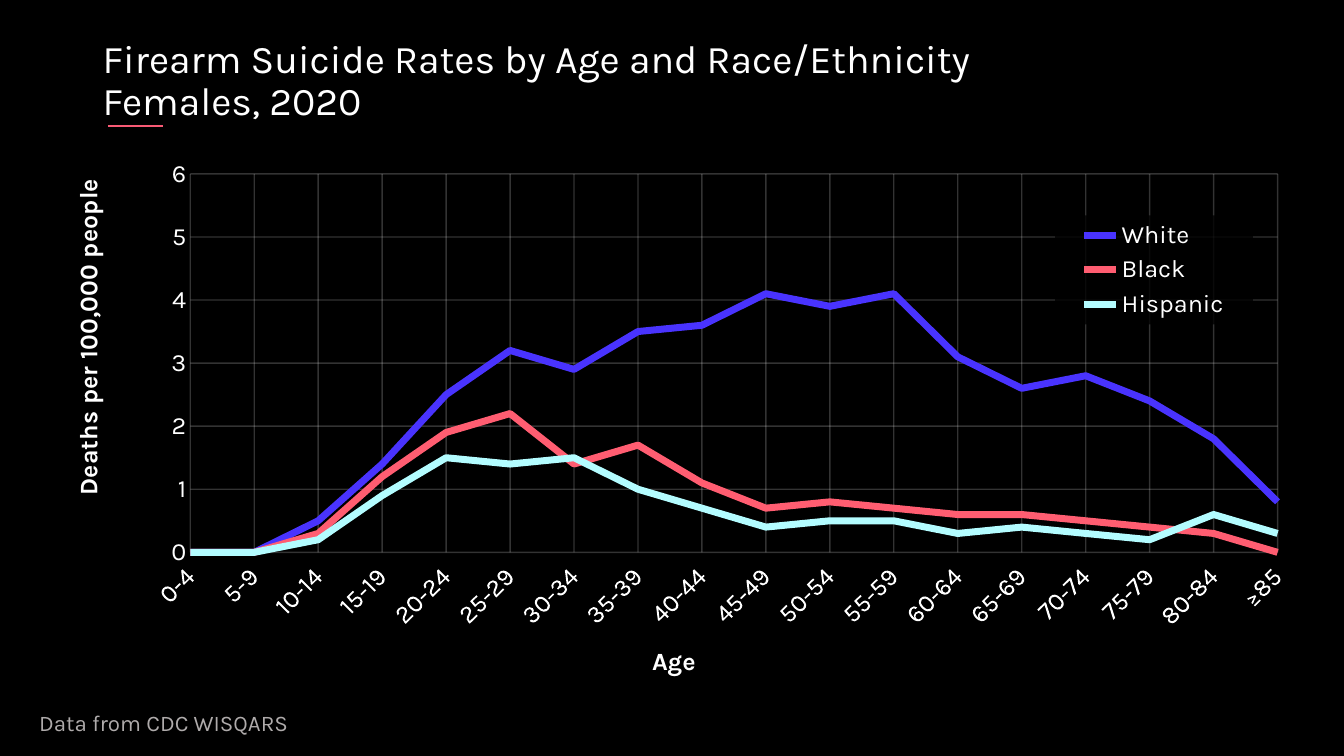
"""Build the slide on firearm suicide rates among females by age and race."""
from dataclasses import dataclass
from typing import Any

from lxml.etree import SubElement
from pptx import Presentation
from pptx.chart.data import CategoryChartData
from pptx.dml.color import RGBColor
from pptx.enum.chart import XL_CHART_TYPE as ChartType
from pptx.enum.chart import XL_LEGEND_POSITION as LegendSide
from pptx.enum.chart import XL_MARKER_STYLE as Marker
from pptx.enum.chart import XL_TICK_LABEL_POSITION as LabelSide
from pptx.enum.chart import XL_TICK_MARK as Tick
from pptx.enum.shapes import MSO_CONNECTOR as Connector
from pptx.enum.text import MSO_ANCHOR as Anchor
from pptx.oxml import parse_xml
from pptx.oxml.ns import nsdecls, qn
from pptx.util import Cm, Pt

FONT = "Karla"
WHITE = "FFFFFF"
AGES = [f"{low}-{low + 4}" for low in range(0, 85, 5)] + ["≥85"]


@dataclass
class Group:
    name: str
    color: str
    rates: list[float]


@dataclass
class Caption:
    lines: list[str]
    box: tuple[float, float, float, float]
    size: int
    color: str
    anchor: Any


GROUPS = [
    Group("White", "4933FE", [0, 0, 0.5, 1.4, 2.5, 3.2, 2.9, 3.5, 3.6,
                              4.1, 3.9, 4.1, 3.1, 2.6, 2.8, 2.4, 1.8, 0.8]),
    Group("Black", "FF5D71", [0, 0, 0.3, 1.2, 1.9, 2.2, 1.4, 1.7, 1.1,
                              0.7, 0.8, 0.7, 0.6, 0.6, 0.5, 0.4, 0.3, 0]),
    Group("Hispanic", "B3FCFF", [0, 0, 0.2, 0.9, 1.5, 1.4, 1.5, 1, 0.7,
                                 0.4, 0.5, 0.5, 0.3, 0.4, 0.3, 0.2, 0.6, 0.3]),
]
CAPTIONS = [
    Caption(["Data from CDC WISQARS"], (0.74, 17.81, 24.84, 1.07), 16, "AFABAB", Anchor.TOP),
    Caption(["Firearm Suicide Rates by Age and Race/Ethnicity", "Females, 2020"],
            (2.34, 0.94, 29.21, 2.24), 28, WHITE, Anchor.MIDDLE),
]


def rgb(code: str) -> RGBColor:
    return RGBColor.from_string(code)


def style(font: Any, size: int, color: str, bold: bool = False) -> None:
    font.name, font.size, font.bold = FONT, Pt(size), bold
    font.color.rgb = rgb(color)


def set_alpha(element: Any, percent: int) -> None:
    for color in element.iter(qn("a:srgbClr")):
        SubElement(color, qn("a:alpha")).set("val", str(percent * 1000))


def place(element: Any, after: str | None, inner: bool = False, **fractions: float) -> None:
    """Give a chart part a manual layout in fractions of the chart."""
    old = element.find(qn("c:layout"))
    if old is not None:
        element.remove(old)
    target = '<c:layoutTarget val="inner"/>' if inner else ""
    modes = "".join(f'<c:{key}Mode val="edge"/>' for key in "xy")
    values = "".join(f'<c:{key} val="{value}"/>' for key, value in fractions.items())
    layout = parse_xml(f'<c:layout {nsdecls("c")}><c:manualLayout>{target}{modes}{values}'
                       "</c:manualLayout></c:layout>")
    if after is None:
        element.insert(0, layout)
    else:
        element.find(qn(after)).addnext(layout)


def add_caption(slide: Any, caption: Caption) -> None:
    frame = slide.shapes.add_textbox(*map(Cm, caption.box)).text_frame
    frame.word_wrap = True
    frame.vertical_anchor = caption.anchor
    paragraph = frame.paragraphs[0]
    paragraph.line_spacing = 0.9
    for index, line in enumerate(caption.lines):
        if index:
            paragraph.add_line_break()
        run = paragraph.add_run()
        run.text = line
        style(run.font, caption.size, caption.color)


def add_title_rule(slide: Any) -> None:
    rule = slide.shapes.add_connector(Connector.STRAIGHT, Cm(2.72), Cm(3.17), Cm(4.11), Cm(3.17))
    rule.line.color.rgb = rgb("F85B75")
    rule.line.width = Pt(1.25)
    SubElement(rule._element.spPr, qn("a:effectLst"))


def format_axis(axis: Any, title: str, x: float, y: float) -> None:
    axis.major_tick_mark = axis.minor_tick_mark = Tick.NONE
    axis.format.line.fill.background()
    axis.has_major_gridlines = True
    grid = axis.major_gridlines.format.line
    grid.color.rgb = rgb(WHITE)
    grid.width = Pt(1)
    set_alpha(axis._element.find(qn("c:majorGridlines")), 20)
    style(axis.tick_labels.font, 18, WHITE)
    run = axis.axis_title.text_frame.paragraphs[0].add_run()
    run.text = title
    style(run.font, 18, WHITE, bold=True)
    place(axis.axis_title._element, "c:tx", x=x, y=y)


def format_legend(chart: Any) -> None:
    chart.has_legend = True
    legend = chart.legend
    legend.position = LegendSide.TOP
    legend.include_in_layout = False
    style(legend.font, 18, WHITE)
    place(legend._element, "c:legendPos", x=0.81, y=0.11, w=0.16, h=0.21)
    backing = parse_xml(f'<c:spPr {nsdecls("c", "a")}><a:solidFill><a:srgbClr val="000000"/>'
                        "</a:solidFill><a:ln><a:noFill/></a:ln></c:spPr>")
    set_alpha(backing, 80)
    legend._element.find(qn("c:overlay")).addnext(backing)


def add_rate_chart(slide: Any) -> None:
    data = CategoryChartData()
    data.categories = AGES
    for group in GROUPS:
        data.add_series(group.name, group.rates)
    box = map(Cm, (1.37, 3.99, 31.14, 13.26))
    chart = slide.shapes.add_chart(ChartType.LINE, *box, data).chart
    chart.has_title = False
    style(chart.font, 18, WHITE)
    for series, group in zip(chart.plots[0].series, GROUPS):
        series.smooth = False
        series.marker.style = Marker.NONE
        series.format.line.color.rgb = rgb(group.color)
        series.format.line.width = Pt(5)
    chart.plots[0].vary_by_categories = False

    ages, rates = chart.category_axis, chart.value_axis
    format_axis(ages, "Age", 0.48, 0.93)
    format_axis(rates, "Deaths per 100,000 people", 0.01, 0.04)
    ages.tick_label_position = LabelSide.LOW
    ages._element.find(qn("c:txPr")).find(qn("a:bodyPr")).set("rot", "-2700000")
    rates.minimum_scale, rates.maximum_scale, rates.major_unit = 0, 6, 1
    rates.tick_labels.number_format = "General"
    rates.tick_labels.number_format_is_linked = False
    crossing = parse_xml(f'<c:crossBetween {nsdecls("c")} val="midCat"/>')
    rates._element.find(qn("c:majorUnit")).addprevious(crossing)
    place(chart._chartSpace.chart.plotArea, None, inner=True, x=0.11, y=0.03, w=0.88, h=0.73)
    format_legend(chart)


def main() -> None:
    deck = Presentation()
    deck.slide_width, deck.slide_height = Cm(33.87), Cm(19.05)
    slide = deck.slides.add_slide(deck.slide_layouts[6])
    slide.background.fill.solid()
    slide.background.fill.fore_color.rgb = rgb("000000")
    add_title_rule(slide)
    add_rate_chart(slide)
    for caption in CAPTIONS:
        add_caption(slide, caption)
    deck.save("out.pptx")


if __name__ == "__main__":
    main()
